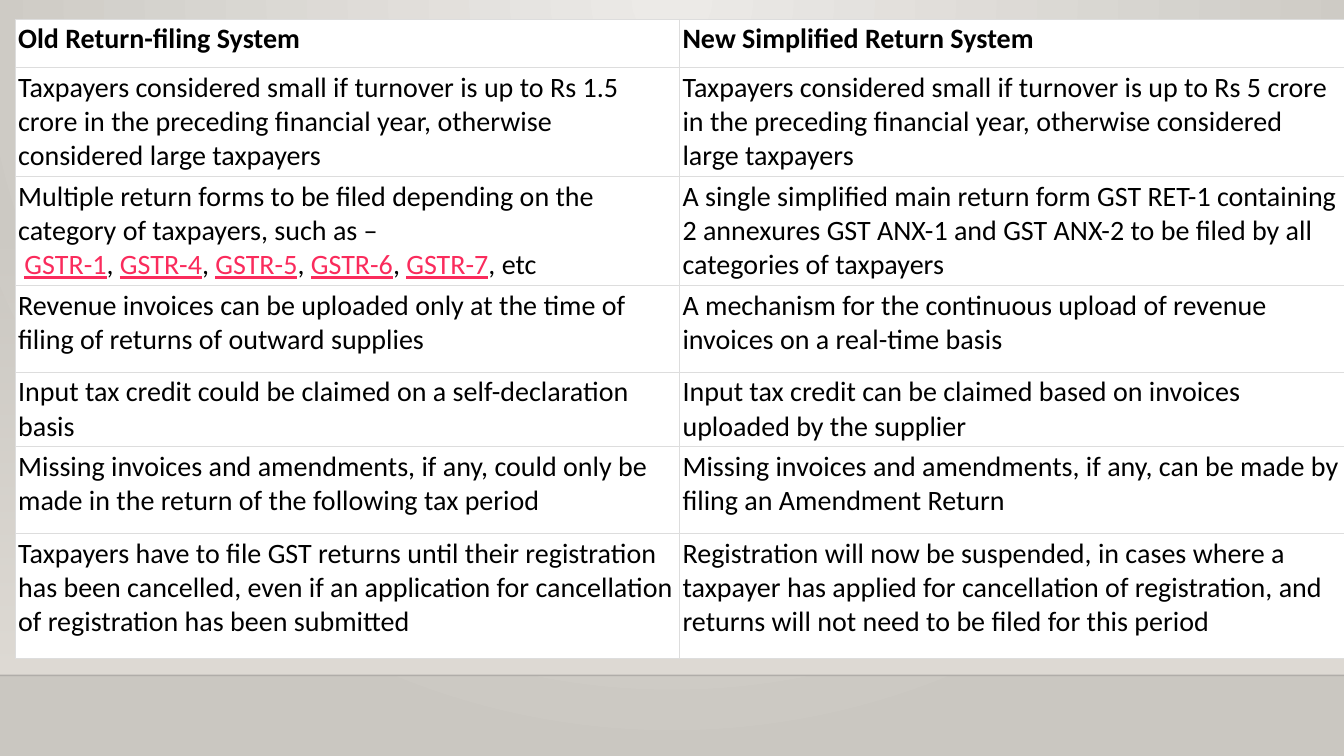
"""Build a slide comparing the old and the new GST return systems."""
from dataclasses import dataclass

from lxml.etree import SubElement
from pptx import Presentation
from pptx.dml.color import RGBColor
from pptx.dml.fill import FillFormat
from pptx.enum.shapes import MSO_CONNECTOR as CONN, MSO_SHAPE as SHAPE
from pptx.oxml.ns import qn
from pptx.slide import Slide
from pptx.table import _Cell as Cell
from pptx.util import Inches, Pt

FONT = "Calibri"
BLACK, WHITE, PINK, GREY = "000000", "FFFFFF", "FA2B5C", "DDDDDD"
NBSP = chr(160)
FORMS = ["GSTR-1", "GSTR-4", "GSTR-5", "GSTR-6", "GSTR-7"]


@dataclass
class Row:
    height: float
    old: str
    new: str
    forms: bool = False


ROWS = [
    Row(0.48, "Old Return-filing System", "New Simplified Return System"),
    Row(1.05,
        "Taxpayers considered small if turnover is up to Rs 1.5 crore in the preceding "
        "financial year, otherwise considered large taxpayers",
        "Taxpayers considered small if turnover is up to Rs 5 crore in the preceding "
        "financial year, otherwise considered large taxpayers"),
    Row(1.05,
        "Multiple return forms to be filed depending on the category of taxpayers, such as –",
        "A single simplified main return form GST RET-1 containing 2 annexures GST ANX-1 "
        "and GST ANX-2 to be filed by all categories of taxpayers",
        forms=True),
    Row(0.86,
        "Revenue invoices can be uploaded only at the time of filing of returns of "
        "outward supplies",
        "A mechanism for the continuous upload of revenue invoices on a real-time basis"),
    Row(0.67,
        "Input tax credit could be claimed on a self-declaration basis",
        "Input tax credit can be claimed based on invoices uploaded by the supplier"),
    Row(0.86,
        "Missing invoices and amendments, if any, could only be made in the return of the "
        "following tax period",
        "Missing invoices and amendments, if any, can be made by filing an Amendment Return"),
    Row(1.24,
        "Taxpayers have to file GST returns until their registration has been cancelled, "
        "even if an application for cancellation of registration has been submitted",
        "Registration will now be suspended, in cases where a taxpayer has applied for "
        "cancellation of registration, and returns will not need to be filed for this period"),
]


def rgb(value: str) -> RGBColor:
    return RGBColor.from_string(value)


def set_gradient(fill: FillFormat, start: str, end: str) -> None:
    fill.gradient()
    fill.gradient_angle = 270
    for stop, color, position in zip(fill.gradient_stops, (start, end), (0, 1)):
        stop.color.rgb = rgb(color)
        stop.position = position


def add_alpha(element, percent: int) -> None:
    color = next(element.iter(qn("a:srgbClr")))
    SubElement(color, qn("a:alpha"), val=str(percent * 1000))


def draw_background(s: Slide) -> None:
    fill = s.background.fill
    set_gradient(fill, "ECEAE7", "CAC7C1")
    grad = next(s.element.iter(qn("a:gradFill")))
    grad.remove(grad.find(qn("a:lin")))
    circle = SubElement(grad, qn("a:path"), path="circle")
    SubElement(circle, qn("a:fillToRect"), l="43000", t="0", r="43000", b="100000")


def draw_floor(s: Slide) -> None:
    wall = s.shapes.add_shape(SHAPE.RECTANGLE, 0, Inches(2.21), Inches(13.33), Inches(4.49))
    wall.shadow.inherit = False
    wall.line.fill.background()
    set_gradient(wall.fill, "DFDBD5", "DFDBD5")
    add_alpha(wall.element.spPr, 0)
    edge = s.shapes.add_connector(CONN.STRAIGHT, 0, Inches(6.7), Inches(13.33), Inches(6.7))
    edge.line.width = Pt(1)
    edge.line.color.rgb = rgb("000001")
    sp_pr = edge.element.spPr
    add_alpha(sp_pr, 20)
    SubElement(sp_pr, qn("a:effectLst"))


def format_cell(cell: Cell) -> None:
    cell.margin_left = cell.margin_right = Inches(0.03)
    cell.margin_top = cell.margin_bottom = Inches(0.03)
    tc_pr = next(cell.text_frame._txBody.getparent().iter(qn("a:tcPr")))
    for side in ("lnL", "lnR", "lnT", "lnB"):
        line = SubElement(tc_pr, qn(f"a:{side}"), w=str(Pt(0.75)))
        solid = SubElement(line, qn("a:solidFill"))
        SubElement(solid, qn("a:srgbClr"), val=GREY)
    cell.fill.solid()
    cell.fill.fore_color.rgb = rgb(WHITE)


def write_cell(cell: Cell, text: str, bold: bool, forms: bool) -> None:
    p = cell.text_frame.paragraphs[0]
    pieces = [text]
    if forms:
        pieces[0] += NBSP
        for form in FORMS:
            pieces += [form, "," + NBSP]
        pieces[-1] = ", etc"
    for piece in pieces:
        is_form = piece in FORMS
        r = p.add_run()
        r.text = piece
        r.font.name, r.font.size = FONT, Pt(20)
        r.font.bold, r.font.underline = bold, is_form
        r.font.color.rgb = rgb(PINK if is_form else BLACK)


def draw_table(s: Slide) -> None:
    height = sum(row.height for row in ROWS)
    frame = s.shapes.add_table(len(ROWS), 2, Inches(0.15), Inches(0.19),
                               Inches(13.18), Inches(height))
    table = frame.table
    table.first_row = table.horz_banding = False
    for column in table.columns:
        column.width = Inches(6.59)
    for i, row in enumerate(ROWS):
        table.rows[i].height = Inches(row.height)
        for j, text in enumerate((row.old, row.new)):
            cell = table.cell(i, j)
            format_cell(cell)
            write_cell(cell, text, bold=i == 0, forms=row.forms and j == 0)


def main() -> None:
    prs = Presentation()
    prs.slide_width, prs.slide_height = Inches(13.33), Inches(7.5)
    s = prs.slides.add_slide(prs.slide_layouts[6])
    draw_background(s)
    draw_floor(s)
    draw_table(s)
    prs.save("out.pptx")


if __name__ == "__main__":
    main()
